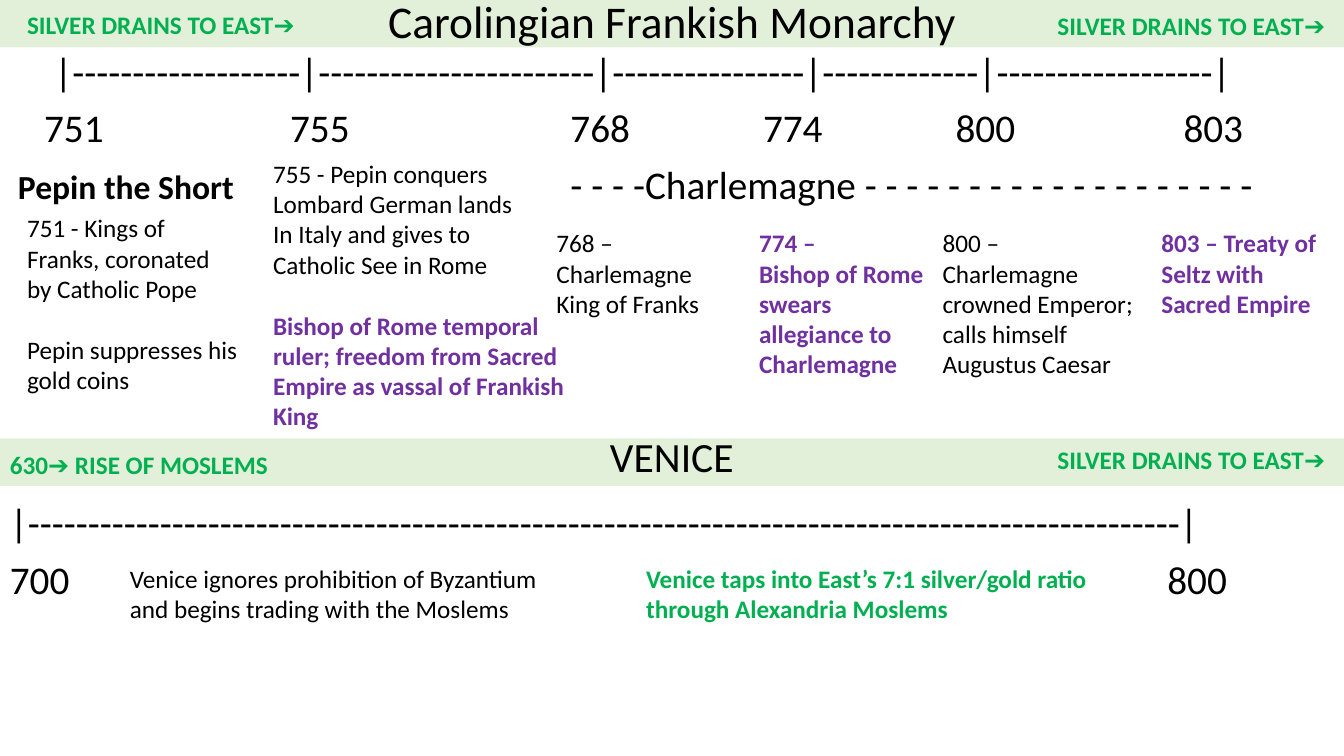
from dataclasses import dataclass

from pptx import Presentation
from pptx.dml.color import RGBColor
from pptx.enum.shapes import MSO_SHAPE
from pptx.enum.text import MSO_ANCHOR, PP_ALIGN
from pptx.util import Inches, Pt

RECTANGLE = MSO_SHAPE.RECTANGLE
MIDDLE = MSO_ANCHOR.MIDDLE
CENTER = PP_ALIGN.CENTER
LEFT = PP_ALIGN.LEFT


@dataclass(frozen=True)
class Theme:
    """Font, colours and type sizes of the slide."""
    font: str = "Calibri"
    ink: str = "000000"
    band: str = "E2F0D9"
    purple: str = "7030A0"
    green: str = "00B050"
    title: float = 32.4
    subtitle: float = 29.7
    row: float = 28
    ruler: float = 24
    note: float = 18
    note_gap: float = 22


THEME = Theme()
WIDTH, HEIGHT = 13.33, 7.5
BAND_HEIGHT = 0.47
ROW_TOP, ROW_PITCH, ROW_HEIGHT = 0.47, 0.56, 0.53
FRANKISH_SPANS = (19, 23, 16, 13, 18)
VENICE_SPANS = (96,)

YEARS = [
    (1, 0.34, "751"),
    (1, 2.78, "755"),
    (1, 5.56, "768"),
    (1, 7.47, "774"),
    (1, 9.38, "800"),
    (1, 11.64, "803"),
    (9, 0, "700"),
    (9, 11.48, "800"),
]

SILVER = "SILVER DRAINS TO EAST➔"
BAND_LABELS = [
    (0.17, 0.04, SILVER),
    (10.39, 0.05, SILVER),
    (0, 4.41, "630➔ RISE OF MOSLEMS"),
    (10.39, 4.36, SILVER),
]

NOTES = [
    (0.17, 2.06, 2.4, 1.92, [
        (THEME.ink, ["751 - Kings of", "Franks, coronated", "by Catholic Pope"]),
        (THEME.ink, ["Pepin suppresses his", "gold coins"]),
    ]),
    (2.61, 1.52, 3.17, 2.83, [
        (THEME.ink, ["755 - Pepin conquers", "Lombard German lands",
                     "In Italy and gives to", "Catholic See in Rome"]),
        (THEME.purple, ["Bishop of Rome temporal", "ruler; freedom from Sacred",
                        "Empire as vassal of Frankish", "King"]),
    ]),
    (5.42, 2.21, 1.75, 1.01, [
        (THEME.ink, ["768 –", "Charlemagne", "King of Franks"]),
    ]),
    (7.43, 2.21, 1.91, 1.62, [
        (THEME.purple, ["774 –", "Bishop of Rome", "swears", "allegiance to",
                        "Charlemagne"]),
    ]),
    (9.25, 2.21, 2.18, 1.62, [
        (THEME.ink, ["800 –", "Charlemagne", "crowned Emperor;",
                     "calls himself", "Augustus Caesar"]),
    ]),
    (11.42, 2.21, 1.85, 1.01, [
        (THEME.purple, ["803 – Treaty of", "Seltz with", "Sacred Empire"]),
    ]),
    (1.19, 5.54, 4.29, 0.71, [
        (THEME.ink, ["Venice ignores prohibition of Byzantium",
                     "and begins trading with the Moslems"]),
    ]),
    (6.31, 5.54, 4.61, 0.71, [
        (THEME.green, ["Venice taps into East’s 7:1 silver/gold ratio",
                       "through Alexandria Moslems"]),
    ]),
]


def write(para, text, size, color=THEME.ink, bold=False, align=LEFT, spacing=1.0):
    """Fill a paragraph and set its type."""
    para.text = text
    para.alignment = align
    para.line_spacing = spacing
    para.font.name = THEME.font
    para.font.size = Pt(size)
    para.font.bold = bold
    para.font.color.rgb = RGBColor.from_string(color)


def add_box(page, left, top, width, height):
    """Add a wrapping text box and return its text frame."""
    box = page.shapes.add_textbox(
        Inches(left), Inches(top), Inches(width), Inches(height))
    box.text_frame.word_wrap = True
    return box.text_frame


def add_band(page, top, text, size, spacing):
    """Add a full-width heading band."""
    band = page.shapes.add_shape(
        RECTANGLE, 0, Inches(top), Inches(WIDTH), Inches(BAND_HEIGHT))
    band.shadow.inherit = False
    band.fill.solid()
    band.fill.fore_color.rgb = RGBColor.from_string(THEME.band)
    band.line.fill.background()
    frame = band.text_frame
    frame.vertical_anchor = MIDDLE
    write(frame.paragraphs[0], text, size, align=CENTER, spacing=spacing)


def add_row_text(page, row, left, text, width, size=THEME.row, bold=False, drop=0):
    """Add one line of large text on a numbered row."""
    top = ROW_TOP + row * ROW_PITCH + drop
    frame = add_box(page, left, top, width, ROW_HEIGHT)
    write(frame.paragraphs[0], text, size, bold=bold, spacing=0.9)


def add_timeline(page, row, left, spans):
    """Add a dashed timeline with a bar at each end of its spans."""
    text = "|" + "".join("-" * span + "|" for span in spans)
    add_row_text(page, row, left, text, WIDTH - left)


def add_note(page, left, top, width, height, blocks):
    """Add a note of one or more blocks; coloured blocks are bold."""
    frame = add_box(page, left, top, width, height)
    para = frame.paragraphs[0]
    for block_index, (color, lines) in enumerate(blocks):
        for line_index, line in enumerate(lines):
            if block_index or line_index:
                para = frame.add_paragraph()
            write(para, line, THEME.note, color, bold=color != THEME.ink)
            if block_index and not line_index:
                para.space_before = Pt(THEME.note_gap)


def main():
    """Build and save the slide."""
    deck = Presentation()
    deck.slide_width, deck.slide_height = Inches(WIDTH), Inches(HEIGHT)
    page = deck.slides.add_slide(deck.slide_layouts[6])

    add_band(page, 0, "Carolingian Frankish Monarchy", THEME.title, 0.9)
    add_band(page, 4.35, "VENICE", THEME.subtitle, 0.7)
    add_timeline(page, 0, 0.44, FRANKISH_SPANS)
    add_timeline(page, 8, 0, VENICE_SPANS)
    for row, left, year in YEARS:
        add_row_text(page, row, left, year, 1)
    add_row_text(page, 2, 0.08, "Pepin the Short", 2.5, THEME.ruler, True, 0.05)
    reign = "- - - -Charlemagne" + " -" * 19
    add_row_text(page, 2, 5.56, reign, WIDTH - 5.56)

    for note in NOTES:
        add_note(page, *note)
    for left, top, text in BAND_LABELS:
        add_note(page, left, top, 2.94, 0.4, [(THEME.green, [text])])

    deck.save("out.pptx")


if __name__ == "__main__":
    main()
